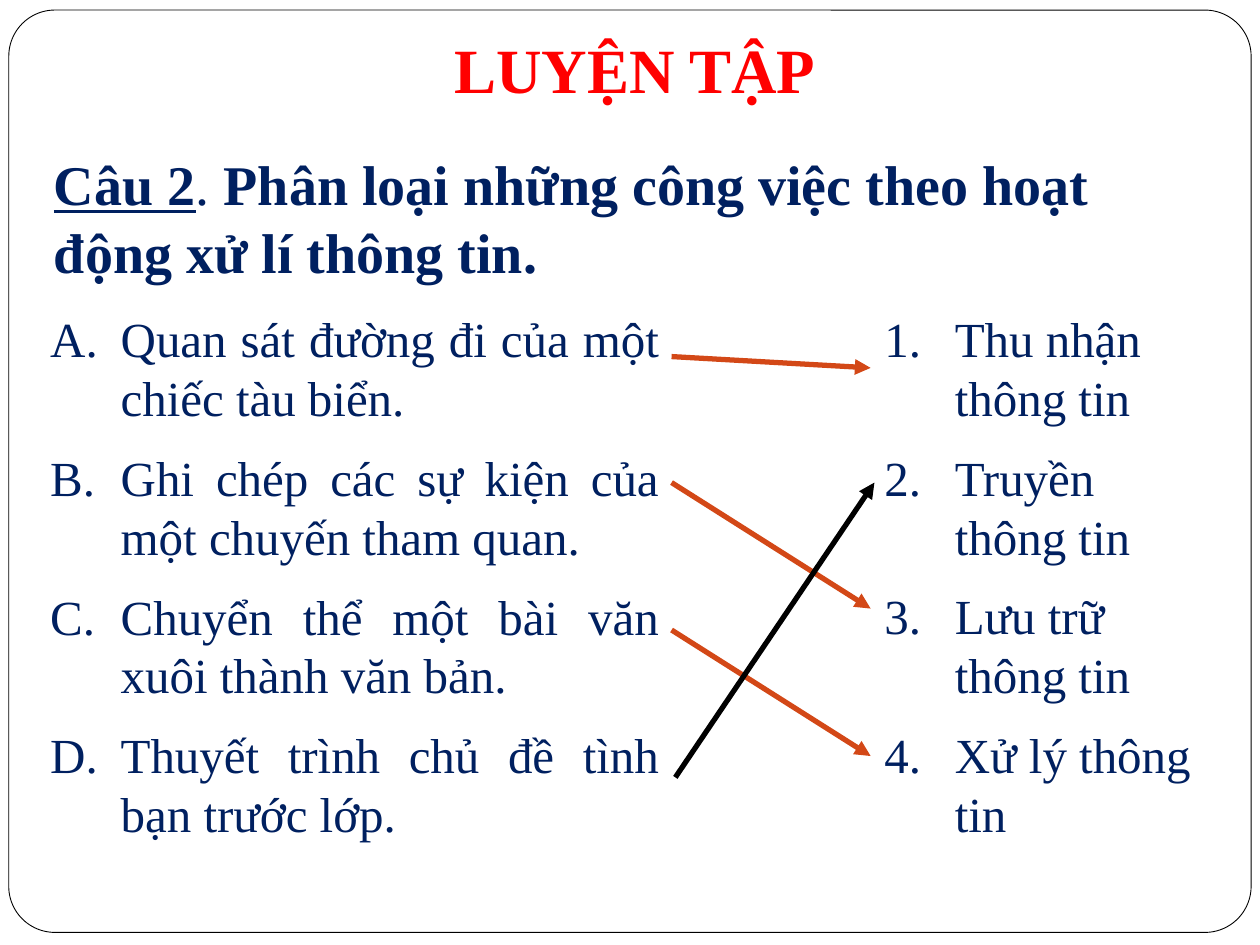
from dataclasses import dataclass

from lxml.etree import SubElement
from pptx import Presentation
from pptx.dml.color import RGBColor as RGB
from pptx.enum.shapes import MSO_CONNECTOR as CONN, MSO_SHAPE as SHAPE
from pptx.enum.text import MSO_ANCHOR as ANCHOR, MSO_AUTO_SIZE as FIT, PP_ALIGN as ALIGN
from pptx.oxml.ns import qn
from pptx.util import Inches, Pt


@dataclass(frozen=True)
class Theme:
    font: str = "Times New Roman"
    white: RGB = RGB(0xFF, 0xFF, 0xFF)
    black: RGB = RGB(0, 0, 0)
    red: RGB = RGB(0xFF, 0, 0)
    navy: RGB = RGB(0x00, 0x20, 0x60)
    orange: RGB = RGB(0xD3, 0x48, 0x17)
    title: int = 36
    question: int = 32
    item: int = 28
    arrow: int = 3


T = Theme()
INDENT = Inches(0.56)
LIST_TOP, LIST_HEIGHT = 2.4, 4.38
LEFT_X, RIGHT_X = 0.3, 6.92          # left edges of the two columns
ARROW_FROM, ARROW_TO = 5.33, 6.91    # gap between the columns

TASKS = [
    "Quan sát đường đi của một chiếc tàu biển.",
    "Ghi chép các sự kiện của một chuyến tham quan.",
    "Chuyển thể một bài văn xuôi thành văn bản.",
    "Thuyết trình chủ đề tình bạn trước lớp.",
]
ACTIVITIES = ["Thu nhận thông tin", "Truyền thông tin", "Lưu trữ thông tin", "Xử lý thông tin"]


def add_run(p, text, size=T.item, color=T.navy, bold=False, underline=False):
    r = p.add_run()
    r.text = text
    f = r.font
    f.name, f.size, f.bold, f.underline = T.font, Pt(size), bold, underline
    f.color.rgb = color


def add_box(s, x, y, w, h):
    tf = s.shapes.add_textbox(Inches(x), Inches(y), Inches(w), Inches(h)).text_frame
    tf.word_wrap = True
    tf.auto_size = FIT.SHAPE_TO_FIT_TEXT
    return tf


def number(p, scheme):
    """Give a paragraph automatic numbering with a hanging indent."""
    pPr = p._p.get_or_add_pPr()
    pPr.set("marL", str(INDENT))
    pPr.set("indent", str(-INDENT))
    SubElement(pPr, qn("a:buFont"), typeface=T.font)
    SubElement(pPr, qn("a:buAutoNum"), type=scheme)


def add_list(s, x, w, items, scheme, align, before, after):
    tf = add_box(s, x, LIST_TOP, w, LIST_HEIGHT)
    for i, text in enumerate(items):
        p = tf.add_paragraph() if i else tf.paragraphs[0]
        number(p, scheme)
        p.alignment = align
        p.space_before = Pt(before if i else 0)
        p.space_after = Pt(after)
        add_run(p, text)


def add_arrow(s, x1, y1, x2, y2, color=T.orange):
    c = s.shapes.add_connector(CONN.STRAIGHT, *map(Inches, (x1, y1, x2, y2)))
    c.line.color.rgb = color
    c.line.width = Pt(T.arrow)
    SubElement(c.line._get_or_add_ln(), qn("a:tailEnd"), type="triangle")
    SubElement(c._element.spPr, qn("a:effectLst"))


def set_title(s, text):
    sp = s.shapes.title
    sp.left, sp.top, sp.width, sp.height = map(Inches, (1.5, 0.17, 7.08, 0.74))
    tf = sp.text_frame
    tf.word_wrap = False
    tf.auto_size = FIT.NONE
    tf.vertical_anchor = ANCHOR.MIDDLE
    p = tf.paragraphs[0]
    p.alignment = ALIGN.CENTER
    add_run(p, text, size=T.title, color=T.red, bold=True)


def add_frame(s):
    """Rounded border, placed behind the title."""
    sp = s.shapes.add_shape(SHAPE.ROUNDED_RECTANGLE, *map(Inches, (0.07, 0.08, 9.86, 7.32)))
    sp.adjustments[0] = 0.05
    sp.shadow.inherit = False
    sp.fill.solid()
    sp.fill.fore_color.rgb = T.white
    sp.line.color.rgb = T.black
    sp.line.width = Pt(0.5)
    s.shapes.title.element.addprevious(sp.element)


def main():
    prs = Presentation()
    prs.slide_width, prs.slide_height = Inches(10), Inches(7.5)
    s = prs.slides.add_slide(prs.slide_layouts[5])

    # Frame and title
    add_frame(s)
    set_title(s, "LUYỆN TẬP")

    # Question
    p = add_box(s, 0.33, 1.14, 9.42, 1.18).paragraphs[0]
    add_run(p, "Câu 2", size=T.question, bold=True, underline=True)
    add_run(p, ". ", size=T.question)
    add_run(p, "Phân loại những công việc theo hoạt động xử lí thông tin.",
            size=T.question, bold=True)

    # Columns to match
    add_list(s, LEFT_X, 5.03, TASKS, "alphaUcPeriod", ALIGN.JUSTIFY, before=6, after=6)
    add_list(s, RIGHT_X, 2.67, ACTIVITIES, "arabicPeriod", ALIGN.LEFT, before=12, after=0)

    # Answers: A-1, B-3, C-4, then D-2
    for y1, y2 in [(2.83, 2.92), (3.83, 4.83), (5, 6)]:
        add_arrow(s, ARROW_FROM, y1, ARROW_TO, y2)
    add_arrow(s, ARROW_FROM + 0.03, 6.17, ARROW_TO + 0.03, 3.83, color=T.black)

    prs.save("out.pptx")


if __name__ == "__main__":
    main()
